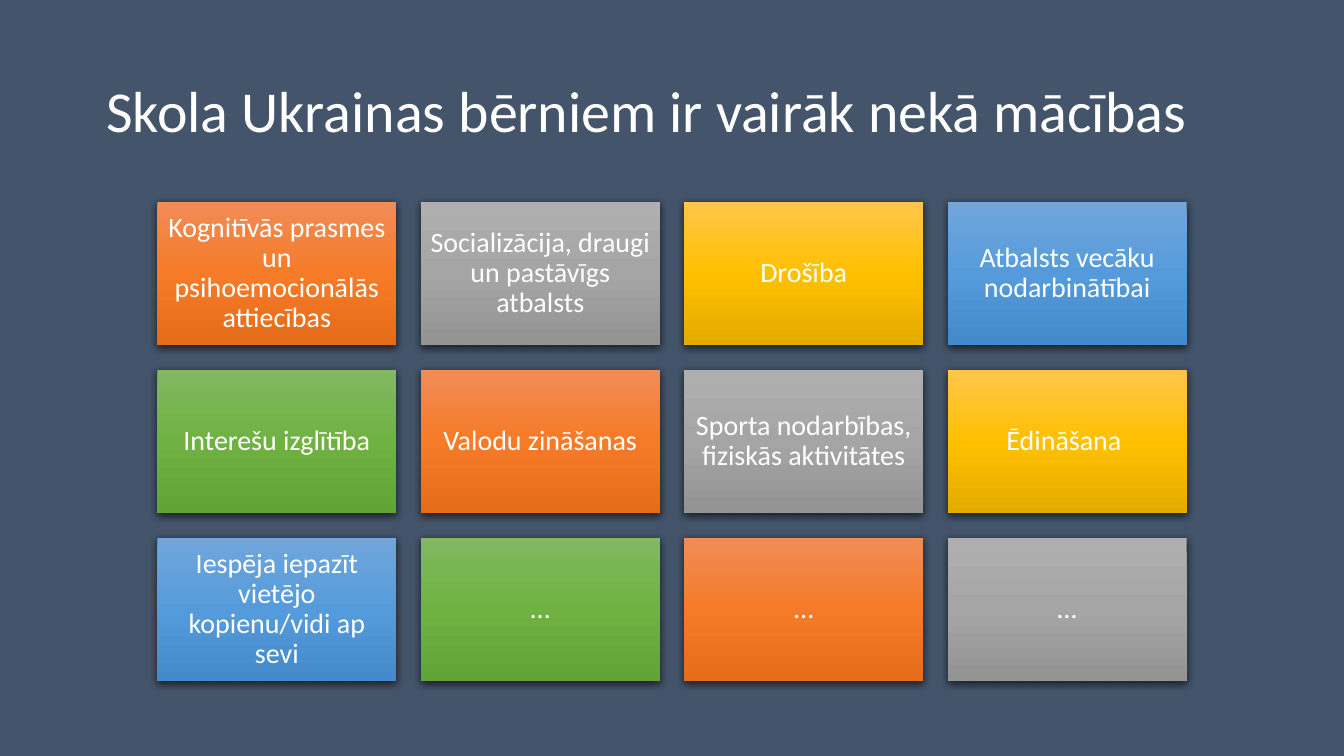
"""Build a slide with a title above a grid of twelve coloured tiles."""
from pptx import Presentation
from pptx.dml.color import RGBColor
from pptx.enum.shapes import MSO_SHAPE
from pptx.enum.text import MSO_ANCHOR, MSO_AUTO_SIZE, PP_ALIGN
from pptx.oxml import parse_xml
from pptx.util import Inches, Pt

RECTANGLE = MSO_SHAPE.RECTANGLE
MIDDLE = MSO_ANCHOR.MIDDLE
NO_AUTOFIT = MSO_AUTO_SIZE.NONE
LEFT, CENTER = PP_ALIGN.LEFT, PP_ALIGN.CENTER

NAMESPACE = 'xmlns:a="http://schemas.openxmlformats.org/drawingml/2006/main"'
SHADOW = (
    f'<a:effectLst {NAMESPACE}><a:outerShdw blurRad="57150" dist="19050" dir="5400000"'
    ' algn="ctr" rotWithShape="0"><a:srgbClr val="000000"><a:alpha val="63000"/>'
    "</a:srgbClr></a:outerShdw></a:effectLst>"
)
GRADIENTS = [
    ("F18C57", "F67B28", "E56C19"),
    ("AFAFAF", "A5A5A5", "939393"),
    ("FFC64B", "FFC000", "E3AB00"),
    ("71A6DB", "559BDB", "448ACA"),
    ("81B861", "6FB242", "62A336"),
]
TILE_TEXTS = [
    "Kognitīvās prasmes un psihoemocionālās attiecības",
    "Socializācija, draugi un pastāvīgs atbalsts",
    "Drošība",
    "Atbalsts vecāku nodarbinātībai",
    "Interešu izglītība",
    "Valodu zināšanas",
    "Sporta nodarbības, fiziskās aktivitātes",
    "Ēdināšana ",
    "Iespēja iepazīt vietējo kopienu/vidi ap sevi",
    "…",
    "…",
    "…",
]
COLUMNS = 4


def color(value):
    return RGBColor.from_string(value)


def write(box, text, size, alignment):
    frame = box.text_frame
    frame.text = text
    frame.word_wrap = True
    frame.auto_size = NO_AUTOFIT
    frame.vertical_anchor = MIDDLE
    para = frame.paragraphs[0]
    para.alignment = alignment
    para.line_spacing = 0.9
    font = para.runs[0].font
    font.name = "Calibri"
    font.size = Pt(size)
    font.color.rgb = color("FFFFFF")


deck = Presentation()
deck.slide_width, deck.slide_height = Inches(10), Inches(10 * 9 / 16)
page = deck.slides.add_slide(deck.slide_layouts[5])
page.background.fill.solid()
page.background.fill.fore_color.rgb = color("44546A")

title = page.shapes.title
title.left, title.top = Inches(0.69), Inches(0.3)
title.width, title.height = Inches(8.62), Inches(1.09)
write(title, "Skola Ukrainas bērniem ir vairāk nekā mācības", 31, LEFT)

for index, text in enumerate(TILE_TEXTS):
    row, column = divmod(index, COLUMNS)
    tile = page.shapes.add_shape(
        RECTANGLE,
        Inches(1.17 + 1.96 * column),
        Inches(1.5 + 1.25 * row),
        Inches(1.78),
        Inches(1.07),
    )
    stops = "".join(
        f'<a:gs pos="{position}"><a:srgbClr val="{value}"/></a:gs>'
        for position, value in zip((0, 50000, 100000), GRADIENTS[index % len(GRADIENTS)])
    )
    properties = tile._element.spPr
    properties.append(parse_xml(
        f'<a:gradFill {NAMESPACE} rotWithShape="1"><a:gsLst>{stops}</a:gsLst>'
        '<a:lin ang="5400000" scaled="0"/></a:gradFill>'
    ))
    tile.line.fill.background()
    properties.append(parse_xml(SHADOW))
    frame = tile.text_frame
    frame.margin_left = frame.margin_right = Inches(0.06)
    frame.margin_top = frame.margin_bottom = Inches(0.06)
    write(tile, text, 15, CENTER)

deck.save("out.pptx")
